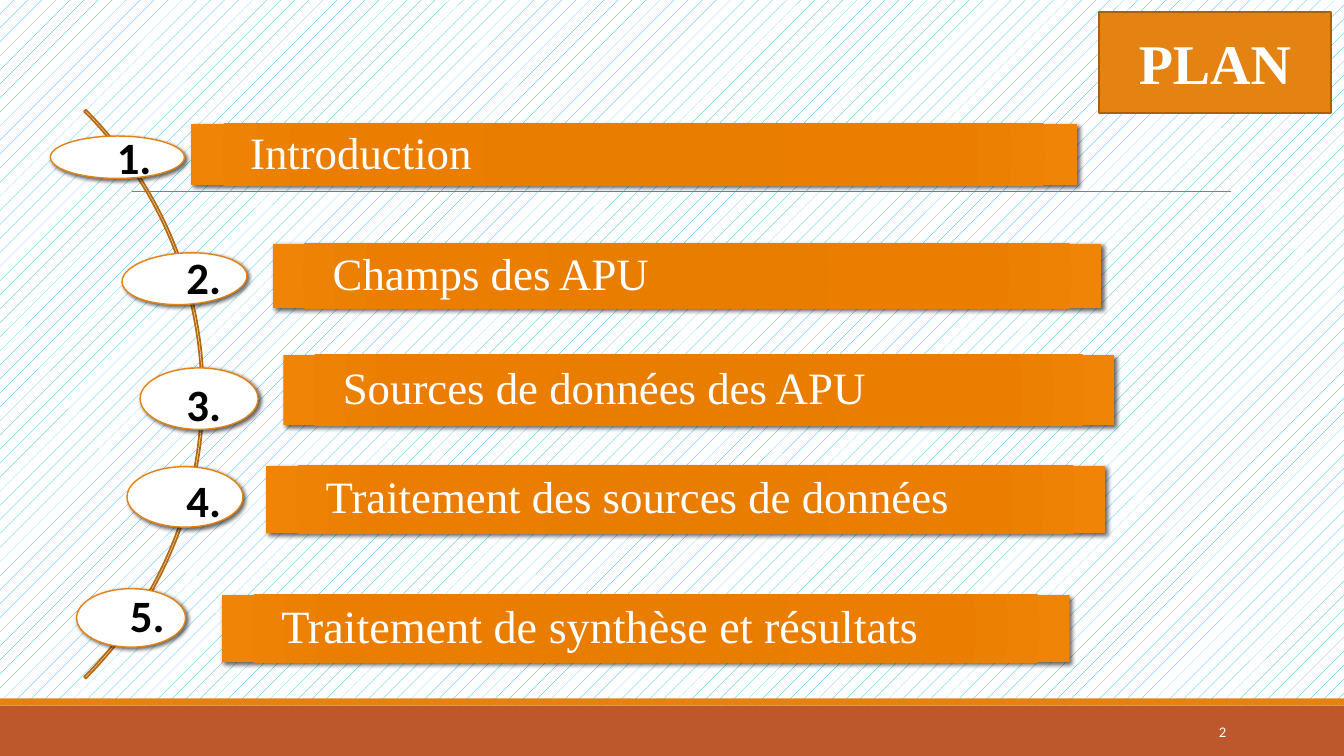
from dataclasses import dataclass

import pptx
import pptx.util
import pptx.oxml
import pptx.oxml.ns
import pptx.dml.color
import pptx.enum.dml
import pptx.enum.shapes
import pptx.enum.text

Inches, Pt = pptx.util.Inches, pptx.util.Pt
RGB = pptx.dml.color.RGBColor.from_string
SHAPE = pptx.enum.shapes.MSO_SHAPE
ANCHOR = pptx.enum.text.MSO_ANCHOR
ALIGN = pptx.enum.text.PP_ALIGN
NS = pptx.oxml.ns.nsdecls("a")


@dataclass
class Theme:
    orange: str = "E48312"
    rust: str = "BD582C"
    arc: str = "B7690E"
    title_line: str = "A9610D"
    rule: str = "808080"
    hatch: str = "00B0F0"
    white: str = "FFFFFF"
    black: str = "000000"
    bar_stops: tuple = ((0, "E57B00"), (34, "E87D00"), (70, "EB7E00"), (100, "EF8407"))
    serif: str = "Times New Roman"
    sans: str = "Calibri"
    title_size: float = 40
    item_size: float = 32
    last_item_size: float = 33
    page_size: float = 10.5


theme = Theme()
shadow_xml = (
    f'<a:effectLst {NS}><a:outerShdw blurRad="38100" dist="25400" dir="2700000" '
    f'algn="ctr" rotWithShape="0"><a:srgbClr val="{theme.black}"><a:alpha val="60000"/>'
    "</a:srgbClr></a:outerShdw></a:effectLst>"
)
stops_xml = "".join(
    f'<a:gs pos="{pos * 1000}"><a:srgbClr val="{color}"/></a:gs>' for pos, color in theme.bar_stops
)
gradient_xml = (
    f'<a:gradFill {NS} rotWithShape="1"><a:gsLst>{stops_xml}</a:gsLst><a:path path="circle">'
    '<a:fillToRect l="100000" t="100000" r="100000" b="100000"/></a:path></a:gradFill>'
)


def add_shape(kind, box, fill=None, line=None, width=1):
    sp = s.shapes.add_shape(kind, *map(Inches, box))
    sp.shadow.inherit = False
    if fill:
        sp.fill.solid()
        sp.fill.fore_color.rgb = RGB(fill)
    else:
        sp.fill.background()
    if line:
        sp.line.color.rgb = RGB(line)
        sp.line.width = Pt(width)
    else:
        sp.line.fill.background()
    return sp


def write(sp, text, size, font, color, bold=False, align=ALIGN.LEFT, anchor=ANCHOR.MIDDLE):
    tf = sp.text_frame
    tf.text = text
    tf.vertical_anchor = anchor
    p = tf.paragraphs[0]
    p.alignment = align
    p.font.size, p.font.name, p.font.bold = Pt(size), font, bold
    p.font.color.rgb = RGB(color)
    return tf


prs = pptx.Presentation()
prs.slide_width, prs.slide_height = Inches(13.33), Inches(7.5)
s = prs.slides.add_slide(prs.slide_layouts[5])

bg = s.background.fill
bg.patterned()
bg.pattern = pptx.enum.dml.MSO_PATTERN.PERCENT_5
bg.fore_color.rgb = RGB(theme.hatch)
bg.back_color.rgb = RGB(theme.white)

# Title badge
title = s.shapes.title
title.left, title.top, title.width, title.height = map(Inches, (10.9, 0.12, 2.3, 1))
title._element.spPr.append(
    pptx.oxml.parse_xml(f'<a:prstGeom {NS} prst="roundRect"><a:avLst/></a:prstGeom>')
)
title.fill.solid()
title.fill.fore_color.rgb = RGB(theme.orange)
title.line.color.rgb = RGB(theme.title_line)
title.line.width = Pt(1.25)
write(title, "PLAN", theme.title_size, theme.serif, theme.white, True, ALIGN.CENTER)

# Rule and footer bands
rule = s.shapes.add_connector(
    pptx.enum.shapes.MSO_CONNECTOR.STRAIGHT, Inches(1.31), Inches(1.9), Inches(12.21), Inches(1.9)
)
rule.line.color.rgb = RGB(theme.rule)
rule.line.width = Pt(0.5)
rule._element.spPr.append(pptx.oxml.parse_xml(f"<a:effectLst {NS}/>"))
add_shape(SHAPE.RECTANGLE, (0, 7, 13.33, 0.5), theme.rust)
add_shape(SHAPE.RECTANGLE, (0, 6.93, 13.33, 0.07), theme.orange)

# Arc from 315 to 45 degrees
arc = add_shape(SHAPE.BLOCK_ARC, (-5.96, -0.08, 7.98, 7.98), line=theme.arc, width=1.25)
for i, value in enumerate((189, 27, 0.003)):
    arc.adjustments[i] = value

# Plan items: text, size, bar box, ellipse box, ellipse tilt, number position
items = [
    ("Introduction", theme.item_size,
     (1.89, 1.23, 8.79, 0.61), (0.5, 1.35, 1.33, 0.42), 0, (1.06, 1.24)),
    ("Champs des APU", theme.item_size,
     (2.71, 2.42, 8.21, 0.64), (1.21, 2.51, 1.24, 0.51), -3.1, (1.75, 2.43)),
    ("Sources de données des APU", theme.item_size,
     (2.81, 3.52, 8.24, 0.7), (1.39, 3.65, 1.17, 0.61), 0, (1.75, 3.69)),
    ("Traitement des sources de données", theme.item_size,
     (2.64, 4.62, 8.32, 0.67), (1.26, 4.63, 1.15, 0.6), 0, (1.75, 4.64)),
    ("Traitement de synthèse et résultats", theme.last_item_size,
     (2.2, 5.9, 8.41, 0.67), (0.76, 5.84, 1.08, 0.58), 0, (1.19, 5.78)),
]
for number, (text, size, bar_box, oval_box, tilt, number_at) in enumerate(items, 1):
    bar = add_shape(SHAPE.RECTANGLE, bar_box)
    bar_pr = bar._element.spPr
    bar_pr.replace(bar_pr.find(pptx.oxml.ns.qn("a:noFill")), pptx.oxml.parse_xml(gradient_xml))
    tf = write(bar, text, size, theme.serif, theme.white)
    tf.margin_left = Inches(0.59)
    tf.margin_right = tf.margin_top = tf.margin_bottom = Inches(0.09)
    tf.paragraphs[0].line_spacing = 0.9

    oval = add_shape(SHAPE.OVAL, oval_box, theme.white, theme.orange)
    oval.rotation = tilt
    for sp in (bar, oval):
        pr = sp._element.spPr
        pr.replace(pr.find(pptx.oxml.ns.qn("a:effectLst")), pptx.oxml.parse_xml(shadow_xml))

    label = s.shapes.add_textbox(*map(Inches, (*number_at, 0.55, 0.64)))
    tf = write(label, f"{number}.", theme.item_size, theme.sans, theme.black, True,
               anchor=ANCHOR.TOP)
    tf.word_wrap = False

page = s.shapes.add_textbox(*map(Inches, (10.83, 7.06, 1.43, 0.4)))
tf = write(page, "2", theme.page_size, theme.sans, theme.white, align=ALIGN.RIGHT)
tf.word_wrap = True

prs.save("out.pptx")
